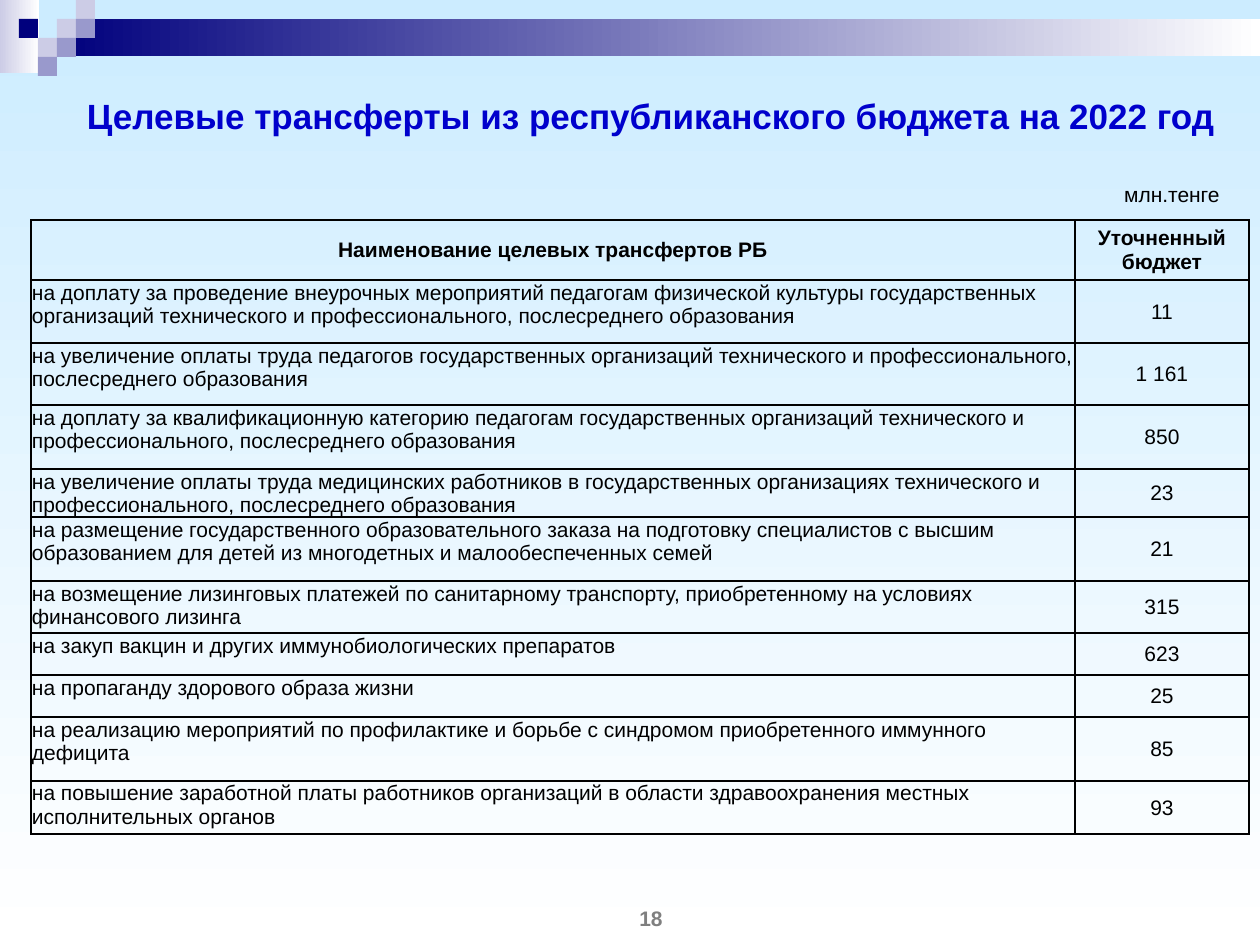
from lxml.etree import SubElement
from pptx import Presentation
from pptx.dml.color import RGBColor
from pptx.enum.shapes import MSO_SHAPE
from pptx.enum.text import MSO_ANCHOR, MSO_AUTO_SIZE, PP_ALIGN
from pptx.oxml.ns import qn
from pptx.util import Pt

SCALE = 914400 / 126
FONT = "Arial"
COLORS = {
    "sky": "CCECFF",
    "white": "FFFFFF",
    "navy": "00007D",
    "lavender": "CCCCE6",
    "violet": "9999CC",
    "title": "0000CC",
    "black": "000000",
    "gray": "7F7F7F",
}
SQUARE = 19
SQUARES = [
    (3, 1, "lavender"),
    (4, 0, "lavender"),
    (4, 1, "violet"),
    (2, 2, "lavender"),
    (1, 1, "navy"),
    (3, 2, "violet"),
    (2, 3, "violet"),
]
COLUMN_WIDTHS = [1044, 174]
HEADER = ("Наименование целевых трансфертов РБ", "Уточненный бюджет")
HEADER_HEIGHT = 60
TRANSFERS = [
    ("на доплату за проведение внеурочных мероприятий педагогам физической культуры государственных "
     "организаций технического и профессионального, послесреднего образования", "11", 63),
    ("на увеличение оплаты труда педагогов государственных организаций технического и "
     "профессионального, послесреднего образования", "1 161", 62),
    ("на доплату за квалификационную категорию педагогам государственных организаций технического и "
     "профессионального, послесреднего образования", "850", 64),
    ("на увеличение оплаты труда медицинских работников в государственных организациях технического и "
     "профессионального, послесреднего образования", "23", 48),
    ("на размещение государственного образовательного заказа на подготовку специалистов с высшим "
     "образованием для детей из многодетных и малообеспеченных семей", "21", 64),
    ("на возмещение лизинговых платежей по санитарному транспорту, приобретенному на условиях "
     "финансового лизинга", "315", 52),
    ("на закуп вакцин и других иммунобиологических препаратов", "623", 42),
    ("на пропаганду здорового образа жизни", "25", 42),
    ("на реализацию мероприятий по профилактике и борьбе с синдромом приобретенного иммунного "
     "дефицита", "85", 64),
    ("на повышение заработной платы работников организаций в области здравоохранения местных "
     "исполнительных органов", "93", 53),
]


def px(length):
    """Turn pixels into EMU."""
    return round(length * SCALE)


def rgb(name):
    """Look up a named colour."""
    return RGBColor.from_string(COLORS[name])


def paint_gradient(fill, start, end, angle=0):
    """Give a fill a two-colour linear gradient."""
    fill.gradient()
    fill.gradient_angle = angle
    for stop, name in zip(fill.gradient_stops, (start, end)):
        stop.color.rgb = rgb(name)


def write_text(frame, text, size=12, color="black", bold=False, align=PP_ALIGN.CENTER):
    """Fill a text frame with one formatted paragraph."""
    frame.text = text
    frame.word_wrap = True
    para = frame.paragraphs[0]
    para.alignment = align
    for span in para.runs:
        span.font.name = FONT
        span.font.size = Pt(size)
        span.font.bold = bold
        span.font.color.rgb = rgb(color)
    return para


def add_rectangle(page, left, top, width, height):
    """Add a rectangle without line or shadow and return its fill."""
    shape = page.shapes.add_shape(MSO_SHAPE.RECTANGLE, px(left), px(top), px(width), px(height))
    shape.shadow.inherit = False
    shape.line.fill.background()
    return shape.fill


def add_decoration(page):
    """Draw the gradient bars and the squares in the top corner."""
    paint_gradient(add_rectangle(page, 0, 0, 39, 73), "lavender", "white")
    paint_gradient(add_rectangle(page, 57, 19, 1203, 37), "navy", "white")
    for column, row, color in SQUARES:
        fill = add_rectangle(page, column * SQUARE, row * SQUARE, SQUARE, SQUARE)
        fill.solid()
        fill.fore_color.rgb = rgb(color)


def set_title(page, text):
    """Place and format the title placeholder."""
    title = page.shapes.title
    title.left, title.top, title.width, title.height = px(50), px(73), px(1202), px(85)
    write_text(title.text_frame, text, 20, "title", True)
    title.text_frame.auto_size = MSO_AUTO_SIZE.NONE
    title.text_frame.vertical_anchor = MSO_ANCHOR.MIDDLE


def add_label(page, left, top, width, height, text, **style):
    """Add a centred text box."""
    box = page.shapes.add_textbox(px(left), px(top), px(width), px(height))
    write_text(box.text_frame, text, **style)
    box.text_frame.vertical_anchor = MSO_ANCHOR.MIDDLE


def set_borders(cell):
    """Give a cell a thin black border and no fill."""
    properties = cell._tc.get_or_add_tcPr()
    for side in ("lnL", "lnR", "lnT", "lnB"):
        line = SubElement(properties, qn(f"a:{side}"), w=str(Pt(1)))
        solid = SubElement(line, qn("a:solidFill"))
        SubElement(solid, qn("a:srgbClr"), val=COLORS["black"])
    cell.fill.background()


def fill_header_cell(cell, text):
    """Write a column heading."""
    para = write_text(cell.text_frame, text, bold=True)
    para.space_before = Pt(2.4)
    cell.vertical_anchor = MSO_ANCHOR.MIDDLE
    set_borders(cell)


def fill_body_cell(cell, text, is_value):
    """Write a transfer name or its amount."""
    write_text(cell.text_frame, text, align=PP_ALIGN.CENTER if is_value else PP_ALIGN.LEFT)
    cell.vertical_anchor = MSO_ANCHOR.MIDDLE if is_value else MSO_ANCHOR.TOP
    cell.margin_left = cell.margin_right = cell.margin_top = px(1)
    cell.margin_bottom = 0
    set_borders(cell)


def add_transfer_table(page):
    """Build the table of transfers."""
    heights = [HEADER_HEIGHT] + [height for _, _, height in TRANSFERS]
    frame = page.shapes.add_table(
        len(heights), len(COLUMN_WIDTHS), px(31), px(220), px(sum(COLUMN_WIDTHS)), px(sum(heights))
    )
    table = frame.table
    table.first_row = table.horz_banding = False
    for column, width in zip(table.columns, COLUMN_WIDTHS):
        column.width = px(width)
    for row, height in zip(table.rows, heights):
        row.height = px(height)
    for index, text in enumerate(HEADER):
        fill_header_cell(table.cell(0, index), text)
    for index, (name, amount, _) in enumerate(TRANSFERS, start=1):
        fill_body_cell(table.cell(index, 0), name, False)
        fill_body_cell(table.cell(index, 1), amount, True)


def main():
    """Build and save the slide."""
    deck = Presentation()
    deck.slide_width, deck.slide_height = px(1260), px(945)
    page = deck.slides.add_slide(deck.slide_layouts[5])
    paint_gradient(page.background.fill, "sky", "white", 270)
    add_decoration(page)
    set_title(page, "Целевые трансферты из республиканского бюджета на 2022 год")
    add_transfer_table(page)
    add_label(page, 1096, 168, 152, 53, "млн.тенге")
    add_label(page, 525, 892, 252, 53, "18", color="gray", bold=True)
    deck.save("out.pptx")


if __name__ == "__main__":
    main()
